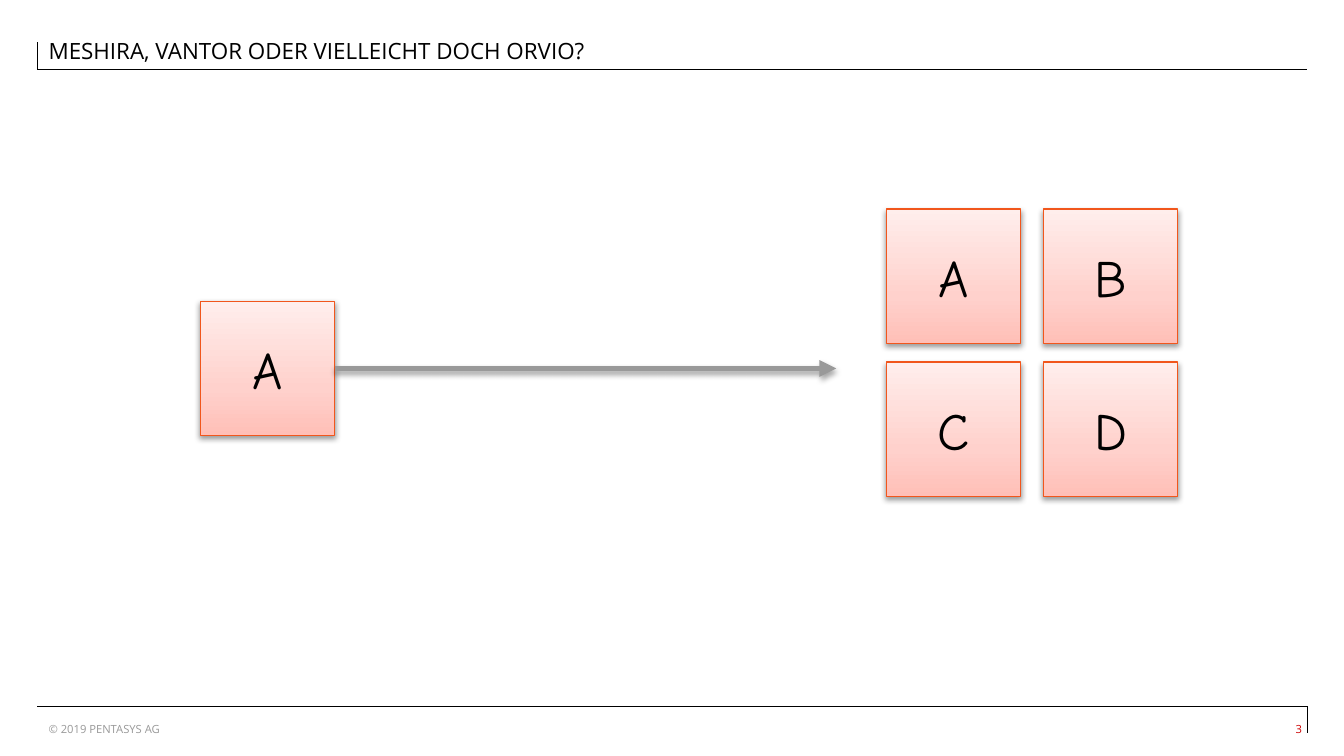
from copy import deepcopy
from dataclasses import dataclass

from lxml import etree
from pptx import Presentation
from pptx.dml.color import RGBColor
from pptx.enum.shapes import MSO_CONNECTOR, MSO_SHAPE
from pptx.enum.text import MSO_ANCHOR, MSO_AUTO_SIZE, PP_ALIGN
from pptx.oxml.ns import qn
from pptx.util import Pt

STRAIGHT = MSO_CONNECTOR.STRAIGHT
RECTANGLE = MSO_SHAPE.RECTANGLE
LEFT, CENTER, RIGHT = PP_ALIGN.LEFT, PP_ALIGN.CENTER, PP_ALIGN.RIGHT
MIDDLE, BOTTOM = MSO_ANCHOR.MIDDLE, MSO_ANCHOR.BOTTOM
TITLE_ONLY = 5


@dataclass(frozen=True)
class Theme:
    black: str = "000000"
    gray: str = "999999"
    red: str = "CC0000"
    border: str = "F1561C"
    gradient: tuple = ((0, "FFBFB7"), (0.35, "FFD1CC"), (1, "FFEEEC"))
    font: str = "Open Sans"
    service_font: str = "Comic Neue"
    title_size: float = 12
    footer_size: float = 6
    service_size: float = 28


THEME = Theme()
SERVICE_SIZE = 72


def write_text(shape, text, *, size, color=THEME.black, font=THEME.font,
               align=LEFT, anchor=MIDDLE, insets=(6, 0), wrap=True):
    """Fill a shape with one formatted line; insets are horizontal, vertical."""
    frame = shape.text_frame
    frame.auto_size = MSO_AUTO_SIZE.NONE
    frame.word_wrap = wrap
    frame.vertical_anchor = anchor
    frame.margin_left = frame.margin_right = Pt(insets[0])
    frame.margin_top = frame.margin_bottom = Pt(insets[1])
    paragraph = frame.paragraphs[0]
    paragraph.alignment = align
    run = paragraph.add_run()
    run.text = text
    run.font.name = font
    run.font.size = Pt(size)
    run.font.color.rgb = RGBColor.from_string(color)


def add_label(slide, text, left, top, width, height, **text_format):
    box = slide.shapes.add_textbox(Pt(left), Pt(top), Pt(width), Pt(height))
    write_text(box, text, size=THEME.footer_size, **text_format)


def set_shadow(shape, distance=None, opacity=None):
    """Replace the inherited shadow with none or with one falling downwards."""
    properties = shape._element.spPr
    effects = properties.find(qn("a:effectLst"))
    if effects is None:
        effects = etree.SubElement(properties, qn("a:effectLst"))
    if distance is None:
        return
    shadow = etree.SubElement(
        effects, qn("a:outerShdw"), blurRad=str(Pt(3.1)), dist=str(Pt(distance)),
        dir="5400000", rotWithShape="0")
    color = etree.SubElement(shadow, qn("a:srgbClr"), val=THEME.black)
    etree.SubElement(color, qn("a:alpha"), val=str(opacity * 1000))


def add_line(slide, x1, y1, x2, y2, color=THEME.black, width=0.1):
    line = slide.shapes.add_connector(STRAIGHT, Pt(x1), Pt(y1), Pt(x2), Pt(y2))
    line.line.color.rgb = RGBColor.from_string(color)
    line.line.width = Pt(width)
    return line


def add_arrow(slide, x1, y1, x2, y2):
    arrow = add_line(slide, x1, y1, x2, y2, THEME.gray, 3)
    outline = arrow._element.spPr.find(qn("a:ln"))
    etree.SubElement(outline, qn("a:tailEnd"), type="triangle")
    set_shadow(arrow, distance=1.8, opacity=35)


def fill_gradient(shape):
    shape.fill.gradient()
    shape.fill.gradient_angle = 90
    stop_list = shape._element.spPr.find(qn("a:gradFill")).find(qn("a:gsLst"))
    stop_list.insert(1, deepcopy(stop_list[0]))
    for stop, (position, color) in zip(shape.fill.gradient_stops, THEME.gradient):
        stop.position = position
        stop.color.rgb = RGBColor.from_string(color)


def add_service(slide, name, left, top):
    box = slide.shapes.add_shape(
        RECTANGLE, Pt(left), Pt(top), Pt(SERVICE_SIZE), Pt(SERVICE_SIZE))
    fill_gradient(box)
    box.line.color.rgb = RGBColor.from_string(THEME.border)
    box.line.width = Pt(0.75)
    box.shadow.inherit = False
    set_shadow(box, distance=1.6, opacity=38)
    write_text(box, name, size=THEME.service_size, font=THEME.service_font,
               align=CENTER, insets=(6, 6))


def set_title(slide, text):
    title = slide.shapes.title
    title.left, title.top, title.width, title.height = (
        Pt(20), Pt(20), Pt(572.5), Pt(14.4))
    write_text(title, text, size=THEME.title_size, anchor=BOTTOM)


def add_frame_lines(slide):
    left, right, header, footer, tick = 20, 700, 37, 378.3, 14.4
    for ends in ((left, footer, right, footer),
                 (right, footer, right, footer + tick),
                 (left, header, right, header),
                 (left, header - tick, left, header)):
        set_shadow(add_line(slide, *ends))


def add_service_grid(slide, names, left, top, columns=2):
    for index, name in enumerate(names):
        row, column = divmod(index, columns)
        add_service(slide, name, left + column * 84, top + row * 82)


def main():
    presentation = Presentation()
    presentation.slide_width, presentation.slide_height = Pt(720), Pt(405)
    slide = presentation.slides.add_slide(presentation.slide_layouts[TITLE_ONLY])

    add_frame_lines(slide)
    set_title(slide, "MESHIRA, VANTOR ODER VIELLEICHT DOCH ORVIO?")

    caller_left, caller_top = 107.3, 161.4
    arrow_y = caller_top + SERVICE_SIZE / 2
    add_service(slide, "A", caller_left, caller_top)
    add_arrow(slide, caller_left + SERVICE_SIZE, arrow_y, 448, arrow_y)
    add_service_grid(slide, "ABCD", 474.9, 112)

    add_label(slide, "© 2019 PENTASYS AG", 20, 383.5, 572.5, 14.4, color=THEME.gray)
    add_label(slide, "3", 678, 383.5, 19.5, 14.4, color=THEME.red,
              align=RIGHT, insets=(0, 0), wrap=False)

    presentation.save("out.pptx")


if __name__ == "__main__":
    main()
